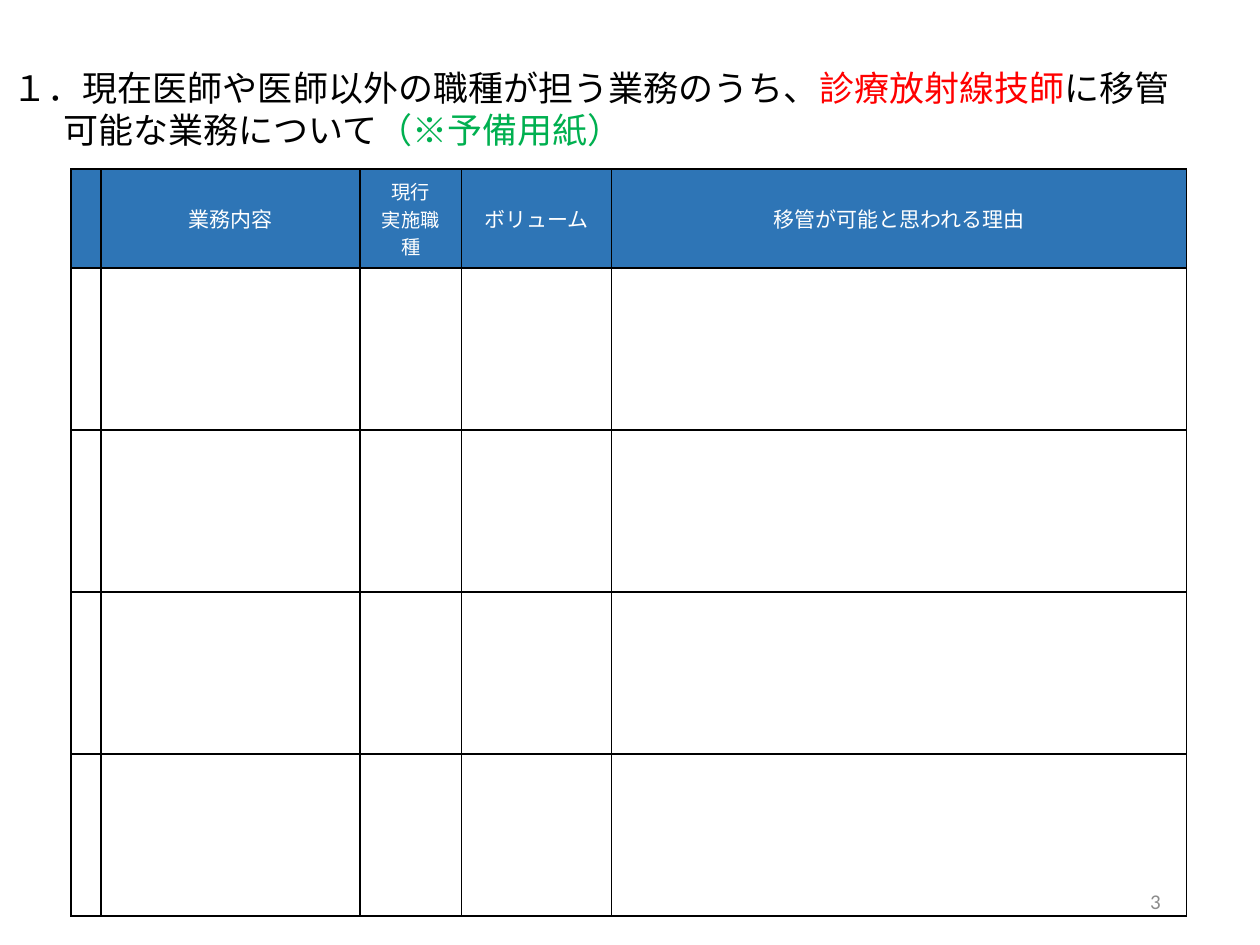
from dataclasses import dataclass

from lxml import etree
from pptx import Presentation
from pptx import util as u
from pptx.dml import color
from pptx.enum import text
from pptx.oxml import ns


@dataclass(frozen=True)
class Theme:
    latin: str = "Calibri"
    japanese: str = "Noto Sans CJK JP"
    black: str = "000000"
    white: str = "FFFFFF"
    red: str = "FF0000"
    green: str = "00B050"
    blue: str = "2E75B6"
    grey: str = "8C8C8C"
    title_size: float = 20
    header_size: float = 12
    small_size: float = 11
    border: float = 1


THEME = Theme()


def add_run(paragraph, words, *, size, colour, font=THEME.latin):
    run = paragraph.add_run()
    run.text = words
    run.font.size = u.Pt(size)
    run.font.name = font
    run.font.color.rgb = color.RGBColor.from_string(colour)
    east_asian = etree.SubElement(run.font._element, ns.qn("a:ea"))
    east_asian.set("typeface", THEME.japanese)


def place(shape, box):
    shape.left, shape.top, shape.width, shape.height = map(u.Pt, box)


def build_title(slide, box):
    title = slide.shapes.title
    place(title, box)
    frame = title.text_frame
    frame.word_wrap = True
    frame.auto_size = text.MSO_AUTO_SIZE.NONE
    frame.vertical_anchor = text.MSO_ANCHOR.TOP
    paragraph = frame.paragraphs[0]
    paragraph.alignment = text.PP_ALIGN.LEFT
    # Hanging indent for the item number
    properties = paragraph._p.get_or_add_pPr()
    properties.set("marL", str(u.Pt(28.8)))
    properties.set("indent", str(u.Pt(-28.8)))
    for words, colour in (
        ("１．現在医師や医師以外の職種が担う業務のうち、", THEME.black),
        ("診療放射線技師", THEME.red),
        ("に移管可能な業務について", THEME.black),
        ("（※予備用紙）", THEME.green),
    ):
        add_run(paragraph, words, size=THEME.title_size, colour=colour,
                font=THEME.japanese)


def draw_borders(cell):
    properties = cell._tc.get_or_add_tcPr()
    for position, side in enumerate(("lnL", "lnR", "lnT", "lnB")):
        line = etree.Element(ns.qn(f"a:{side}"), w=str(u.Pt(THEME.border)))
        fill = etree.SubElement(line, ns.qn("a:solidFill"))
        etree.SubElement(fill, ns.qn("a:srgbClr"), val=THEME.black)
        properties.insert(position, line)


def build_table(slide, box):
    headers = (
        ((), THEME.header_size),
        (("業務内容",), THEME.header_size),
        (("現行", "実施職種"), THEME.small_size),
        (("ボリューム",), THEME.header_size),
        (("移管が可能と思われる理由",), THEME.header_size),
    )
    blank_rows, header_height = 4, 56.8
    left, top, width, height = box
    table = slide.shapes.add_table(
        blank_rows + 1, len(headers), *map(u.Pt, box)).table

    # The last column takes the remaining width; blank rows share the height
    widths = [17, 148, 58, 85.7]
    for column, size in zip(table.columns, widths + [width - sum(widths)]):
        column.width = u.Pt(size)
    for index, row in enumerate(table.rows):
        row.height = u.Pt((height - header_height) / blank_rows
                          if index else header_height)
        for cell in row.cells:
            if index:
                cell.fill.background()
            else:
                cell.fill.solid()
                cell.fill.fore_color.rgb = color.RGBColor.from_string(THEME.blue)
            draw_borders(cell)

    # Header labels
    for cell, (lines, size) in zip(table.rows[0].cells, headers):
        cell.vertical_anchor = text.MSO_ANCHOR.MIDDLE
        frame = cell.text_frame
        for index, words in enumerate(lines):
            paragraph = frame.add_paragraph() if index else frame.paragraphs[0]
            paragraph.alignment = text.PP_ALIGN.CENTER
            add_run(paragraph, words, size=size, colour=THEME.white)


def build_page_number(slide, box, number):
    frame = slide.shapes.add_textbox(*map(u.Pt, box)).text_frame
    frame.word_wrap = True
    frame.vertical_anchor = text.MSO_ANCHOR.MIDDLE
    paragraph = frame.paragraphs[0]
    paragraph.alignment = text.PP_ALIGN.RIGHT
    add_run(paragraph, number, size=THEME.header_size, colour=THEME.grey)


def main():
    presentation = Presentation()
    presentation.slide_width, presentation.slide_height = u.Pt(720), u.Pt(540)
    title_only = presentation.slide_layouts[5]
    slide = presentation.slides.add_slide(title_only)
    build_title(slide, (0, 34.6, 684.7, 55.4))
    build_table(slide, (40.6, 96.5, 637.2, 427))
    build_page_number(slide, (508.3, 500.4, 162, 28.8), "3")
    presentation.save("out.pptx")


if __name__ == "__main__":
    main()
